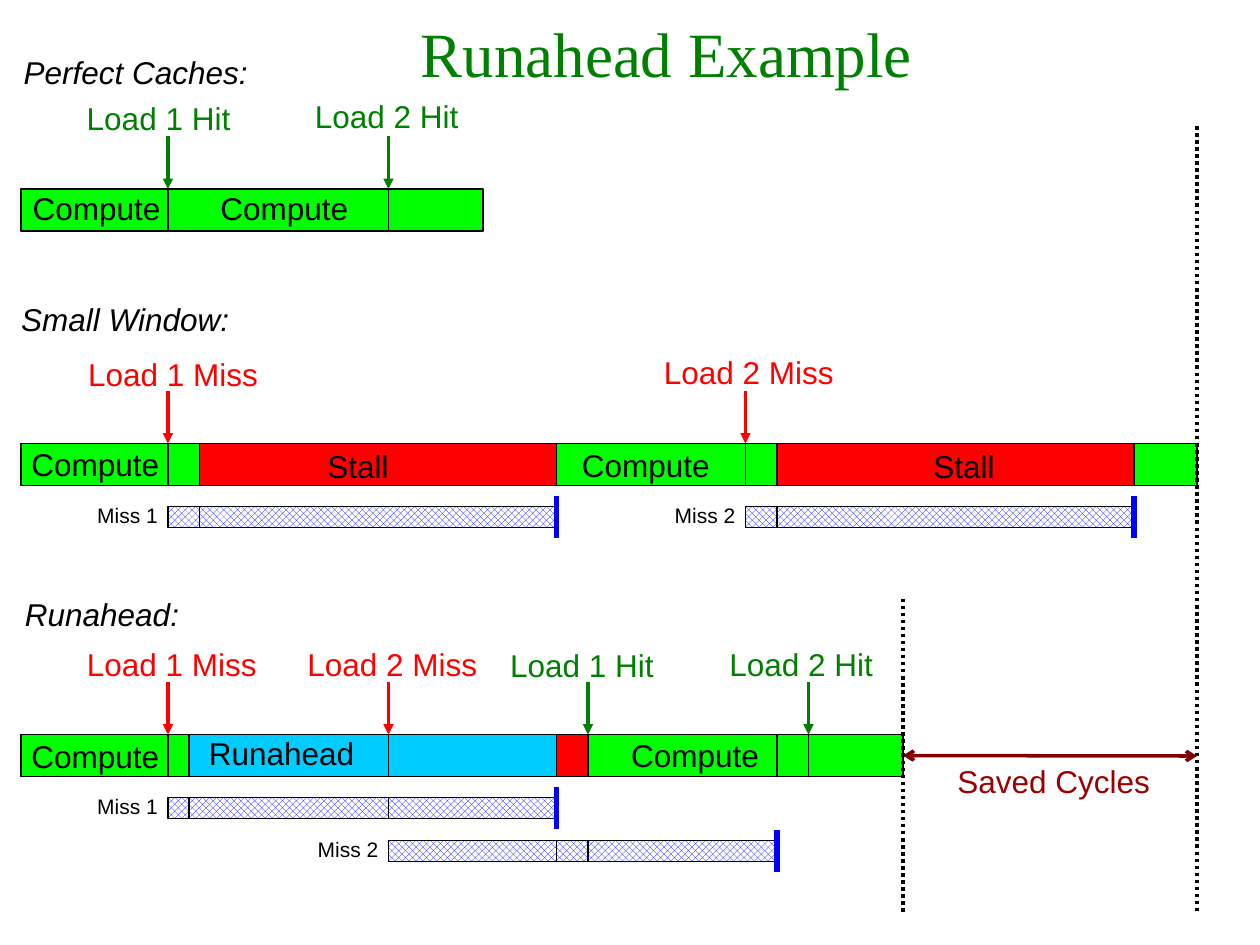
from pptx import Presentation
from pptx.dml.color import RGBColor
from pptx.enum import dml, shapes, text
from pptx.oxml.ns import qn
from pptx.util import Inches, Pt
from lxml import etree

HUES = {"go": "00FF00", "stall": "FF0000", "ahead": "00CCFF", "hit": "008000",
        "miss": "FF0000", "end": "0000FF", "ink": "000000", "paper": "FFFFFF",
        "span": "800000", "saved": "990000"}
UNIT = 1 / 12
BAR, THIN = 4 * UNIT, 2 * UNIT

ROWS = [
    dict(top=1.5, edges=[2, 16, 37, 46], fills=["go", "go", "go"],
         marks=[(16, "hit"), (37, "hit")]),
    dict(top=3.52, edges=[2, 16, 19, 53, 71, 74, 108, 114],
         fills=["go", "go", "stall", "go", "go", "stall", "go"],
         marks=[(16, "miss"), (71, "miss")]),
    dict(top=5.83, edges=[2, 16, 18, 37, 53, 56, 74, 77, 86],
         fills=["go", "go", "ahead", "ahead", "stall", "go", "go", "go"],
         marks=[(16, "miss"), (37, "miss"), (56, "hit"), (77, "hit")]),
]
WAITS = [
    ("Miss 1", 4.02, [16, 19, 53]),
    ("Miss 2", 4.02, [71, 74, 108]),
    ("Miss 1", 6.33, [16, 18, 37, 53]),
    ("Miss 2", 6.67, [37, 53, 56, 74]),
]
HEADS = [("Perfect Caches:", 0.09, 0.37), ("Small Window:", 0.07, 2.33),
         ("Runahead:", 0.1, 4.67)]
LABELS = [
    ("Compute", 1.22, "ink", [(0.16, 1.45), (1.65, 1.45), (0.15, 3.48),
                              (4.52, 3.49), (0.15, 5.8), (4.91, 5.79)]),
    ("Stall", 0.69, "ink", [(2.5, 3.5), (7.31, 3.5)]),
    ("Runahead", 1.37, "ink", [(1.56, 5.78)]),
    ("Load 1 Hit", 1.34, "hit", [(0.59, 0.74), (3.95, 5.08)]),
    ("Load 2 Hit", 1.34, "hit", [(2.4, 0.72), (5.69, 5.07)]),
    ("Load 1 Miss", 1.55, "miss", [(0.6, 2.77), (0.59, 5.07)]),
    ("Load 2 Miss", 1.55, "miss", [(5.17, 2.75), (2.34, 5.07)]),
]
DOTS = [(86, 4.75), (114, 1)]
FLOOR = 7.25

deck = Presentation()
deck.slide_width, deck.slide_height = Inches(10), Inches(7.5)
slide = deck.slides.add_slide(deck.slide_layouts[5])


def hue(name):
    return RGBColor.from_string(HUES[name])


def write(frame, words, size=18, font="Arial", color="ink", italic=False, align=None):
    par = frame.paragraphs[0]
    par.alignment = align
    run = par.add_run()
    run.text = words
    run.font.size, run.font.name, run.font.italic = Pt(size), font, italic
    run.font.color.rgb = hue(color)


def label(words, x, y, wide, high=0.4, wrap=False, **style):
    frame = slide.shapes.add_textbox(*map(Inches, (x, y, wide, high))).text_frame
    frame.word_wrap = wrap
    frame.auto_size = text.MSO_AUTO_SIZE.SHAPE_TO_FIT_TEXT
    write(frame, words, **style)


def block(start, stop, top, high, fill=None):
    box = slide.shapes.add_shape(
        shapes.MSO_SHAPE.RECTANGLE, Inches(start * UNIT), Inches(top),
        Inches((stop - start) * UNIT), Inches(high))
    box.shadow.inherit = False
    if fill:
        box.fill.solid()
        box.fill.fore_color.rgb = hue(fill)
    else:
        box.fill.patterned()
        box.fill.pattern = dml.MSO_PATTERN.LARGE_CHECKER_BOARD
        box.fill.fore_color.rgb = hue("end")
        box.fill.back_color.rgb = hue("paper")
    box.line.color.rgb = hue("ink")
    box.line.width = Pt(0.75)
    return box


def rule(x1, y1, x2, y2, color, width, dash=None, head=None, tail=None):
    line = slide.shapes.add_connector(
        shapes.MSO_CONNECTOR.STRAIGHT, *map(Inches, (x1, y1, x2, y2)))
    line.line.color.rgb = hue(color)
    line.line.width = Pt(width)
    if dash:
        line.line.dash_style = dash
    props = line._element.spPr
    for tag, kind in (("a:headEnd", head), ("a:tailEnd", tail)):
        if kind:
            etree.SubElement(props.find(qn("a:ln")), qn(tag), type=kind)
    etree.SubElement(props, qn("a:effectLst"))
    return line


title = slide.shapes.title
title.left, title.top, title.width, title.height = map(Inches, (0.58, -0.17, 9.42, 1.17))
title.text_frame.vertical_anchor = text.MSO_ANCHOR.MIDDLE
write(title.text_frame, "Runahead Example", size=36, font="Times New Roman",
      color="hit", align=text.PP_ALIGN.CENTER)

for row in ROWS:
    edges, top = row["edges"], row["top"]
    for start, stop, fill in zip(edges, edges[1:], row["fills"]):
        last = block(start, stop, top, BAR, fill)
    for mark, color in row["marks"]:
        rule(mark * UNIT, top - 5 * UNIT, mark * UNIT, top, color, 1.75, tail="triangle")

for words, top, edges in WAITS:
    for start, stop in zip(edges, edges[1:]):
        block(start, stop, top, THIN)
    end = edges[-1] * UNIT
    rule(end, top - UNIT, end, top + THIN + UNIT, "end", 3)
    label(words, edges[0] * UNIT - 0.66, top - 0.08, 0.68, 0.3, size=12)

for words, wide, color, spots in LABELS:
    for x, y in spots:
        label(words, x, y, wide, color=color)
for words, x, y in HEADS:
    label(words, x, y, 2.3, wrap=True, italic=True)

for mark, top in DOTS:
    rule(mark * UNIT, top, mark * UNIT, FLOOR, "ink", 2, dash=dml.MSO_LINE.ROUND_DOT)
span = rule(86 * UNIT, 6, 114 * UNIT, 6, "span", 2, head="arrow", tail="arrow")
span.begin_connect(last, 3)
label("Saved Cycles", 7.5, 6, 1.83, wrap=True, color="saved")

deck.save("out.pptx")
